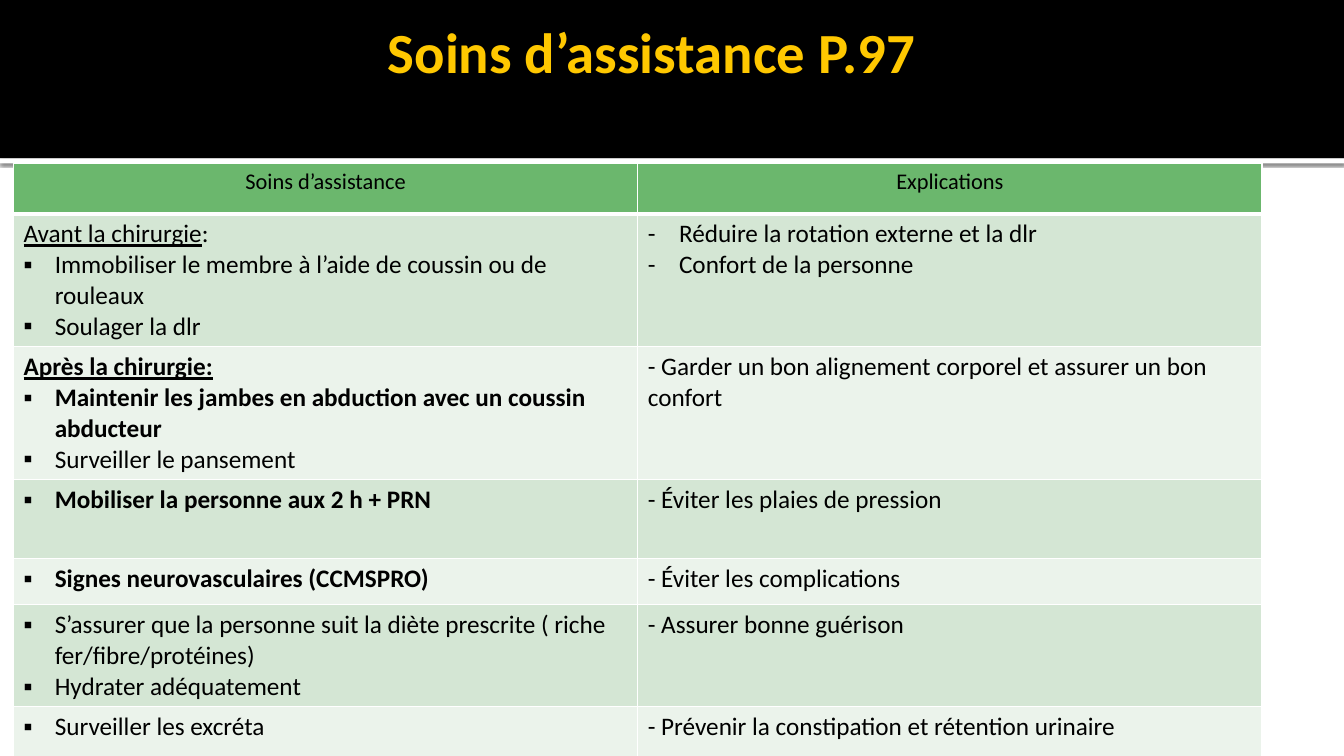
from lxml import etree
from pptx import Presentation, util as u
from pptx.dml.color import RGBColor
from pptx.enum import shapes, text
from pptx.oxml import ns

COLORS = {
    "white": "FFFFFF", "black": "000000", "gold": "FFC800",
    "header": "6BB76D", "odd": "D4E6D4", "even": "EBF3EB",
}
COLUMNS, ROWS = 40, 45
SQUARE, DASH = "▪", "-"

HEADINGS = ["Soins d’assistance", "Explications"]
ROW_HEIGHTS = [3, 7.92, 7.92, 4.68, 2.76, 6.06, 4.38]
# Each paragraph: wording, bullet, format
CARE = [
    ([("Avant la chirurgie", None, {"underline": True, "tail": ":"}),
      ("Immobiliser le membre à l’aide de coussin ou de rouleaux", SQUARE, {}),
      ("Soulager la dlr", SQUARE, {})],
     [("Réduire la rotation externe et la dlr", DASH, {}),
      ("Confort de la personne", DASH, {})]),
    ([("Après la chirurgie:", None, {"bold": True, "underline": True}),
      ("Maintenir les jambes en abduction avec un coussin abducteur", SQUARE, {"bold": True}),
      ("Surveiller le pansement", SQUARE, {})],
     [("- Garder un bon alignement corporel et assurer un bon confort", None, {})]),
    ([("Mobiliser la personne aux 2 h + PRN", SQUARE, {"bold": True})],
     [("- Éviter les plaies de pression", None, {})]),
    ([("Signes neurovasculaires (CCMSPRO)", SQUARE, {"bold": True})],
     [("- Éviter les complications", None, {})]),
    ([("S’assurer que la personne suit la diète prescrite ( riche fer/fibre/protéines)", SQUARE, {}),
      ("Hydrater adéquatement", SQUARE, {})],
     [("- Assurer bonne guérison", None, {})]),
    ([("Surveiller les excréta", SQUARE, {})],
     [("- Prévenir la constipation et rétention urinaire", None, {})]),
]


def rgb(name):
    return RGBColor.from_string(COLORS[name])


def add_xml(parent, tag, **attributes):
    return etree.SubElement(parent, ns.qn(tag), attributes)


def write(paragraph, wording, size=18, color="black", bold=False, underline=False, align=None, tail=""):
    """Add a run in the given format, then an optional tail without underline."""
    run = paragraph.add_run()
    run.text = wording
    run.font.name = "Calibri"
    run.font.size = u.Pt(size)
    run.font.color.rgb = rgb(color)
    run.font.bold = bold
    run.font.underline = underline
    if align is not None:
        paragraph.alignment = align
    if tail:
        write(paragraph, tail, size, color, bold)


def add_bullet(paragraph, character):
    properties = paragraph._p.get_or_add_pPr()
    indent = u.Inches(0.31)
    properties.set("marL", str(indent))
    properties.set("indent", str(-indent))
    add_xml(properties, "a:buFont", typeface="Calibri")
    add_xml(properties, "a:buChar", char=character)


class Deck:
    """Holds the slide and places elements in columns and rows of its grid."""

    def __init__(self):
        self.presentation = Presentation()
        self.presentation.slide_width = u.Inches(13.33)
        self.presentation.slide_height = u.Inches(7.5)
        self.slide = self.presentation.slides.add_slide(self.presentation.slide_layouts[6])

    def across(self, columns):
        return round(self.presentation.slide_width * columns / COLUMNS)

    def down(self, rows):
        return round(self.presentation.slide_height * rows / ROWS)

    def place(self, left, top, width, height):
        return self.across(left), self.down(top), self.across(width), self.down(height)

    def band(self, top, height, color, shadow=False):
        shape = self.slide.shapes.add_shape(
            shapes.MSO_SHAPE.RECTANGLE, *self.place(0, top, COLUMNS, height))
        shape.shadow.inherit = False
        shape.fill.solid()
        shape.fill.fore_color.rgb = rgb(color)
        shape.line.fill.background()
        if shadow:
            effects = shape._element.spPr.find(ns.qn("a:effectLst"))
            outer = add_xml(effects, "a:outerShdw", blurRad=str(u.Pt(2.5)), dist=str(u.Pt(0.8)),
                            dir="5400000", algn="t", rotWithShape="0")
            shade = add_xml(outer, "a:srgbClr", val=COLORS["black"])
            add_xml(shade, "a:alpha", val="60000")

    def title(self, wording, left, top, width, height):
        box = self.slide.shapes.add_textbox(*self.place(left, top, width, height))
        frame = box.text_frame
        frame.word_wrap = True
        frame.vertical_anchor = text.MSO_ANCHOR.TOP
        frame.margin_left, frame.margin_right = u.Inches(0.1), u.Inches(0.5)
        frame.margin_top = 0
        write(frame.paragraphs[0], wording, size=40.5, color="gold", bold=True,
              align=text.PP_ALIGN.CENTER)

    def style_cell(self, cell, color, bottom=1):
        properties = cell._tc.get_or_add_tcPr()
        for side, points in (("L", 1), ("R", 1), ("T", 1), ("B", bottom)):
            line = add_xml(properties, f"a:ln{side}", w=str(u.Pt(points)))
            add_xml(add_xml(line, "a:solidFill"), "a:srgbClr", val=COLORS["white"])
        cell.fill.solid()
        cell.fill.fore_color.rgb = rgb(color)

    def table(self, headings, body, left, top, width, heights):
        table = self.slide.shapes.add_table(
            len(heights), len(headings), *self.place(left, top, width, sum(heights))).table
        for row, height in zip(table.rows, heights):
            row.height = self.down(height)
        for column, heading in enumerate(headings):
            cell = table.cell(0, column)
            self.style_cell(cell, "header", bottom=3)
            write(cell.text_frame.paragraphs[0], heading, size=16, align=text.PP_ALIGN.CENTER)
        for row, contents in enumerate(body, start=1):
            for column, paragraphs in enumerate(contents):
                cell = table.cell(row, column)
                self.style_cell(cell, "odd" if row % 2 else "even")
                self.fill_cell(cell, paragraphs)

    def fill_cell(self, cell, paragraphs):
        frame = cell.text_frame
        for number, (wording, bullet, style) in enumerate(paragraphs):
            paragraph = frame.add_paragraph() if number else frame.paragraphs[0]
            if bullet:
                add_bullet(paragraph, bullet)
            write(paragraph, wording, **style)


def main():
    deck = Deck()
    deck.band(9.42, 0.3, "white", shadow=True)
    deck.band(0, 9.42, "black")
    deck.title("Soins d’assistance P.97", 2, 1, 36, 8.22)
    deck.table(HEADINGS, CARE, 0.4, 9.72, 37.16, ROW_HEIGHTS)
    deck.presentation.save("out.pptx")


if __name__ == "__main__":
    main()
